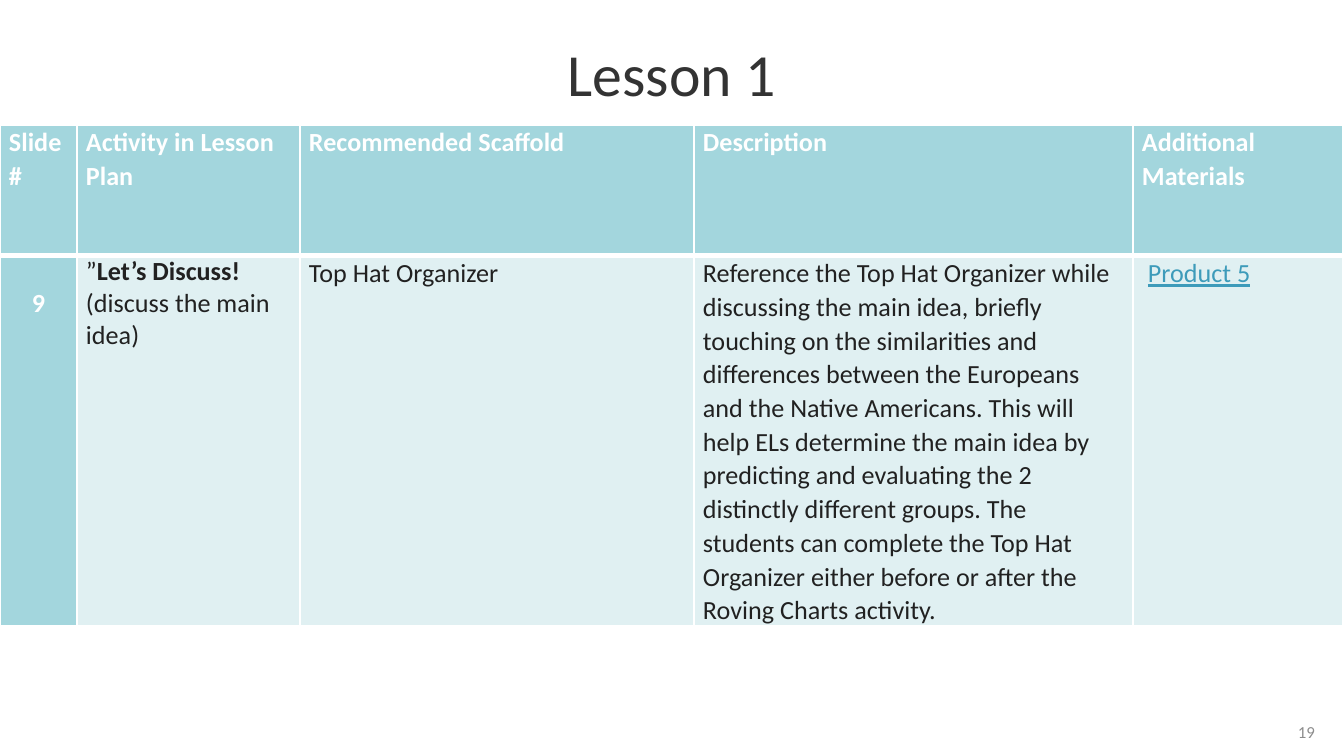
from lxml import etree
from pptx import Presentation
from pptx.dml.color import RGBColor
from pptx.enum.text import MSO_ANCHOR, PP_ALIGN
from pptx.oxml.ns import qn
from pptx.util import Pt

EMU_PER_PX = 914400 / 134.4
SLIDE_WIDTH, SLIDE_HEIGHT = 1344, 756
FONT = "Calibri"
LEFT, CENTER, RIGHT = PP_ALIGN.LEFT, PP_ALIGN.CENTER, PP_ALIGN.RIGHT
MIDDLE = MSO_ANCHOR.MIDDLE

WHITE = RGBColor(0xFF, 0xFF, 0xFF)
TITLE_GRAY = RGBColor(0x33, 0x33, 0x33)
NUMBER_GRAY = RGBColor(0x8D, 0x8D, 0x8D)
INK = RGBColor(0x21, 0x21, 0x21)
LINK_BLUE = RGBColor(0x3D, 0x9B, 0xBA)
TEAL = RGBColor(0xA3, 0xD6, 0xDD)
PALE_TEAL = RGBColor(0xE0, 0xF0, 0xF2)

COLUMN_WIDTHS = [77, 223, 394, 439, 210]
ROW_HEIGHTS = [131, 370]
CELL_MARGIN, LINK_MARGIN = 9, 15
TABLE_SPACING = 1.06

HEADER = {"size": Pt(14), "bold": True, "color": WHITE}
BODY = {"size": Pt(14), "bold": False, "color": INK}
STRONG = {**BODY, "bold": True}
LINK = {**BODY, "color": LINK_BLUE, "underline": True}

HEADINGS = ["Slide #", "Activity in Lesson Plan", "Recommended Scaffold",
            "Description", "Additional Materials"]
DESCRIPTION = (
    "Reference the Top Hat Organizer while discussing the main idea, briefly "
    "touching on the similarities and differences between the Europeans and "
    "the Native Americans. This will help ELs determine the main idea by "
    "predicting and evaluating the 2 distinctly different groups. The students "
    "can complete the Top Hat Organizer either before or after the Roving "
    "Charts activity.")


def px(length):
    return round(length * EMU_PER_PX)


def write_paragraphs(text_frame, paragraphs, align=LEFT, spacing=1.0):
    """Write paragraphs, each a list of (text, format) runs."""
    for index, runs in enumerate(paragraphs):
        paragraph = text_frame.add_paragraph() if index else text_frame.paragraphs[0]
        paragraph.alignment = align
        paragraph.line_spacing = spacing
        for text, style in runs:
            run = paragraph.add_run()
            run.text = text
            run.font.name = FONT
            for name, value in style.items():
                if name == "color":
                    run.font.color.rgb = value
                else:
                    setattr(run.font, name, value)


def add_text(slide, box, text, style, align, spacing=1.0):
    shape = slide.shapes.add_textbox(*map(px, box))
    text_frame = shape.text_frame
    text_frame.word_wrap = True
    text_frame.vertical_anchor = MIDDLE
    write_paragraphs(text_frame, [[(text, style)]], align, spacing)


def set_borders(cell, widths):
    """Draw white borders; widths maps L, R, T and B to points."""
    properties = cell._tc.get_or_add_tcPr()
    for side, width in widths.items():
        line = etree.SubElement(properties, qn(f"a:ln{side}"), w=str(Pt(width)))
        fill = etree.SubElement(line, qn("a:solidFill"))
        etree.SubElement(fill, qn("a:srgbClr"), val=str(WHITE))


def fill_cell(cell, paragraphs, color, borders, margin=CELL_MARGIN,
              align=LEFT, spacing=TABLE_SPACING):
    set_borders(cell, borders)
    cell.fill.solid()
    cell.fill.fore_color.rgb = color
    cell.margin_left, cell.margin_right = px(margin), px(CELL_MARGIN)
    cell.margin_top = cell.margin_bottom = 0
    write_paragraphs(cell.text_frame, paragraphs, align, spacing)


def add_lesson_table(slide):
    frame = slide.shapes.add_table(
        len(ROW_HEIGHTS), len(COLUMN_WIDTHS), 0, px(125),
        px(sum(COLUMN_WIDTHS)), px(sum(ROW_HEIGHTS)))
    table = frame.table
    table.horz_banding = False
    for column, width in zip(table.columns, COLUMN_WIDTHS):
        column.width = px(width)
    for row, height in zip(table.rows, ROW_HEIGHTS):
        row.height = px(height)

    header_borders = {"L": 1, "R": 1, "T": 1, "B": 3}
    for column, heading in enumerate(HEADINGS):
        fill_cell(table.cell(0, column), [[(heading, HEADER)]], TEAL, header_borders)

    activity = [[("”", BODY), ("Let’s Discuss!", STRONG)],
                [("(discuss the main idea)", BODY)]]
    lesson_cells = [
        ([[("9", HEADER)]], TEAL, {"align": CENTER, "spacing": 2.0}),
        (activity, PALE_TEAL, {"spacing": 1.0}),
        ([[("Top Hat Organizer", BODY)]], PALE_TEAL, {}),
        ([[(DESCRIPTION, BODY)]], PALE_TEAL, {}),
        ([[("Product 5", LINK)]], PALE_TEAL, {"margin": LINK_MARGIN}),
    ]
    lesson_borders = {"L": 1, "R": 1, "T": 3, "B": 1}
    for column, (paragraphs, color, layout) in enumerate(lesson_cells):
        fill_cell(table.cell(1, column), paragraphs, color, lesson_borders, **layout)


def main():
    presentation = Presentation()
    presentation.slide_width = px(SLIDE_WIDTH)
    presentation.slide_height = px(SLIDE_HEIGHT)
    slide = presentation.slides.add_slide(presentation.slide_layouts[6])
    add_text(slide, (1000, 706, 328, 51), "19",
             {"size": Pt(9), "color": NUMBER_GRAY}, RIGHT)
    add_text(slide, (0, 0, SLIDE_WIDTH, 155), "Lesson 1",
             {"size": Pt(32), "color": TITLE_GRAY}, CENTER, 0.9)
    add_lesson_table(slide)
    presentation.save("out.pptx")


if __name__ == "__main__":
    main()
